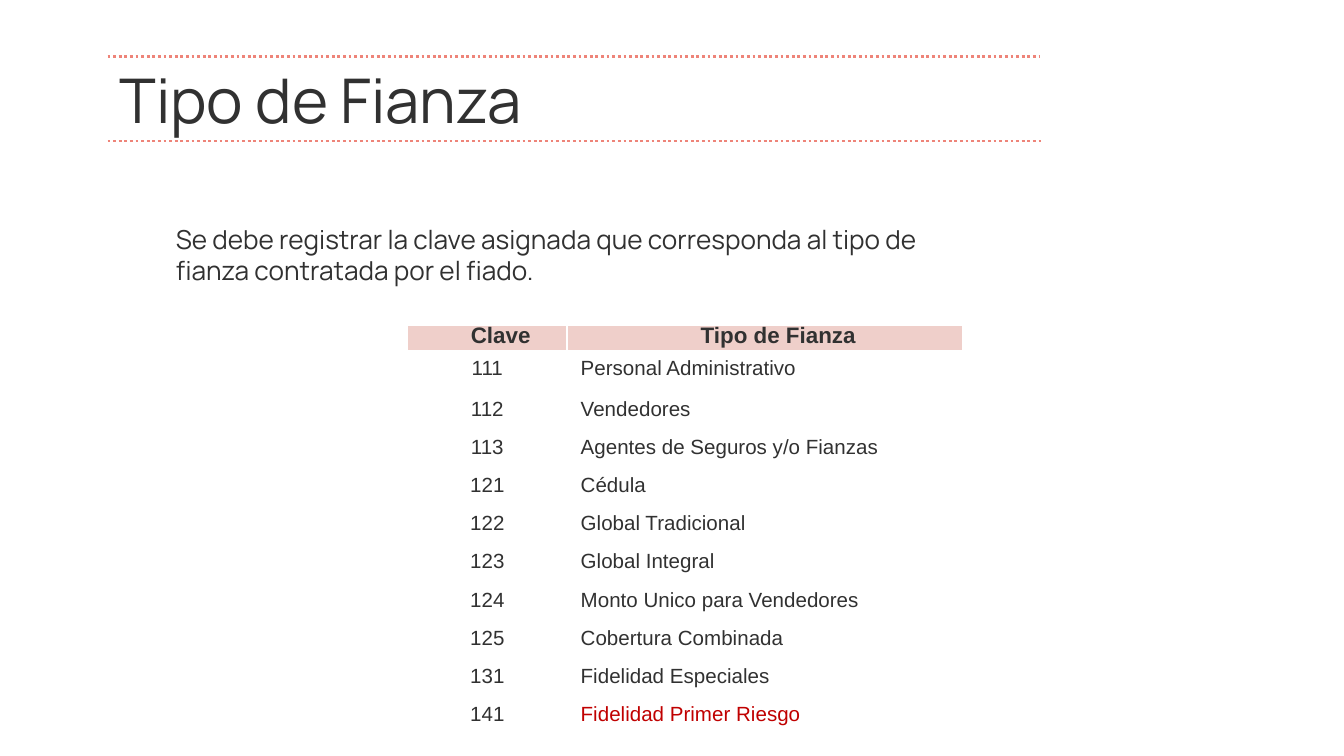
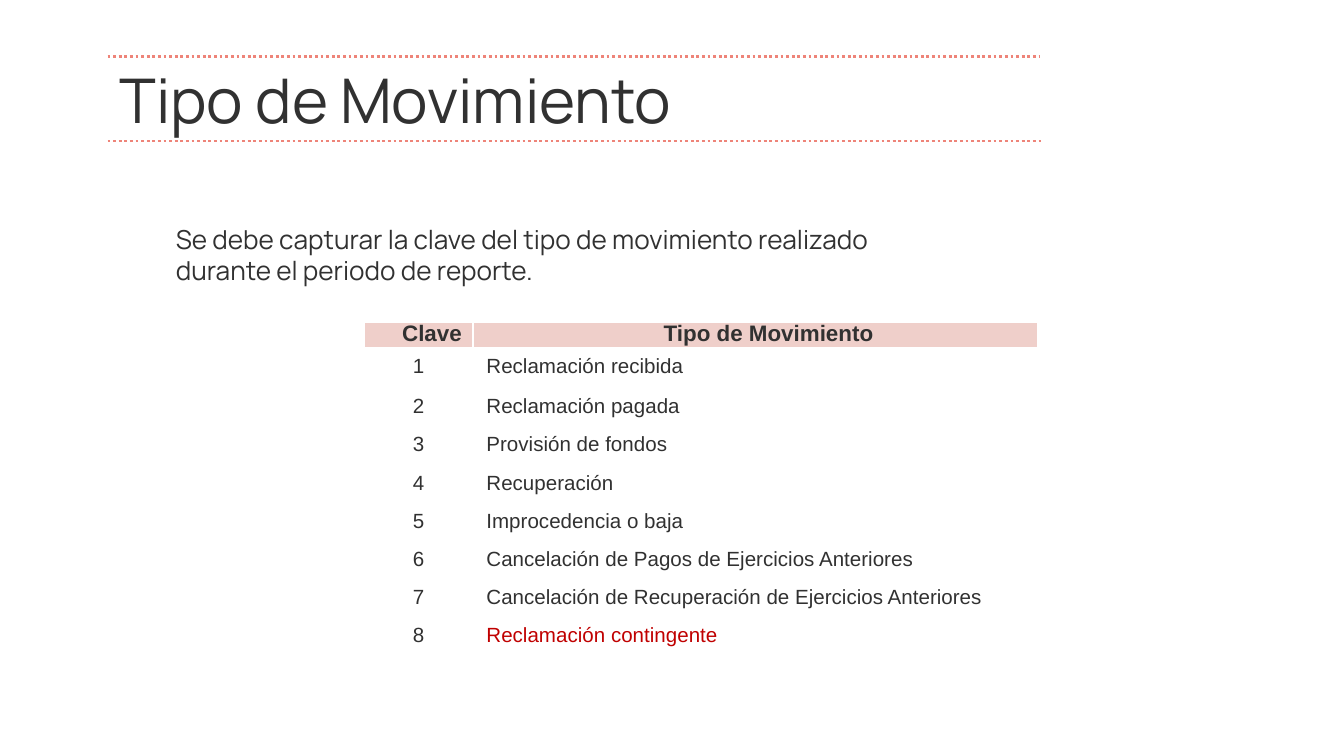
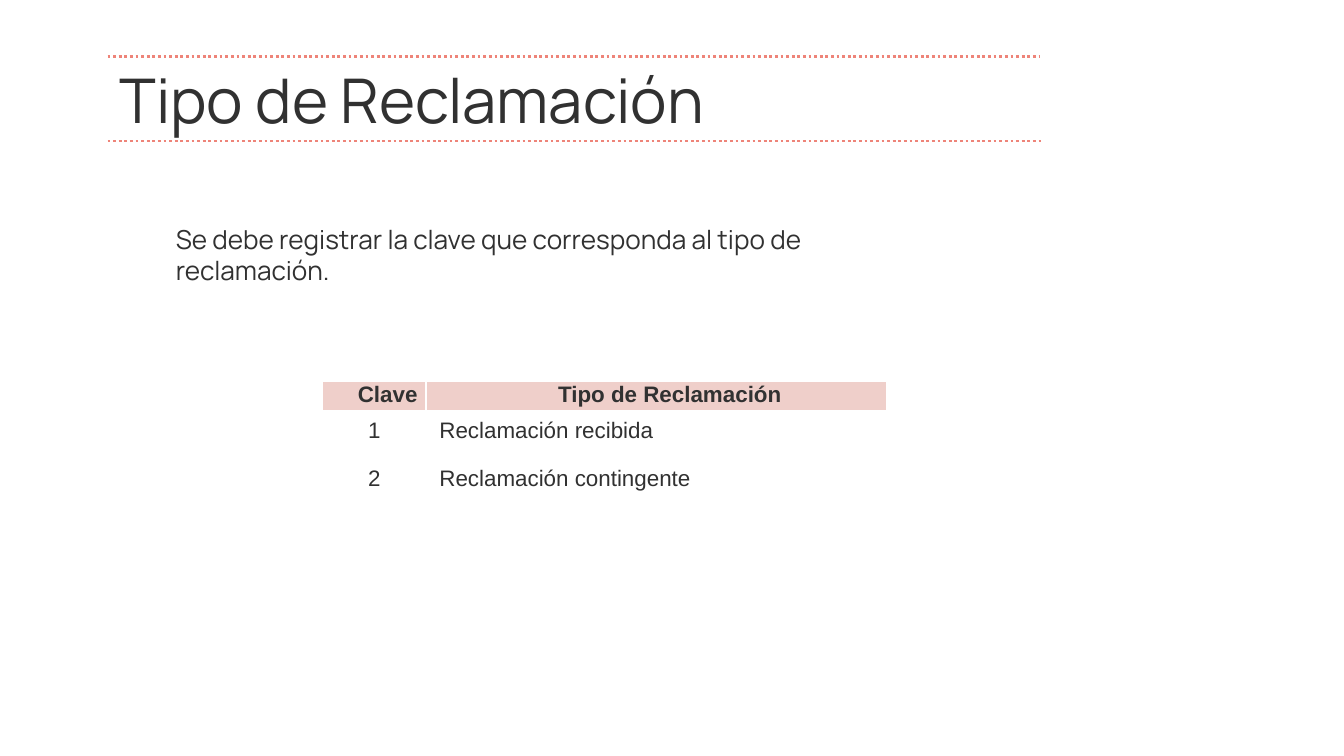
from lxml import etree
from pptx import Presentation
from pptx.dml.color import RGBColor
from pptx.enum import dml, shapes, text
from pptx.oxml.ns import qn
from pptx.util import Pt

INK = RGBColor(0x31, 0x31, 0x31)
CORAL = RGBColor(0xEE, 0x84, 0x79)
BLUSH = RGBColor(0xEF, 0xCF, 0xCA)
RED = RGBColor(0xC0, 0x00, 0x00)
WHITE = RGBColor(0xFF, 0xFF, 0xFF)

CATALOGUES = [
    {
        "title": "Tipo de Fianza",
        "intro": "Se debe registrar la clave asignada que corresponda al tipo de "
                 "fianza contratada por el fiado.",
        "entries": [
            ("111", "Personal Administrativo"),
            ("112", "Vendedores"),
            ("113", "Agentes de Seguros y/o Fianzas"),
            ("121", "Cédula"),
            ("122", "Global Tradicional"),
            ("123", "Global Integral"),
            ("124", "Monto Unico para Vendedores"),
            ("125", "Cobertura Combinada"),
            ("131", "Fidelidad Especiales"),
            ("141", "Fidelidad Primer Riesgo"),
        ],
        "highlight": "141",
        "corner": (218.2, 174.2),
        "columns": (85.7, 211.7),
        "rows": (13.7, 21.6, 19.6),
        "size": 11,
    },
    {
        "title": "Tipo de Movimiento",
        "intro": "Se debe capturar la clave del tipo de movimiento realizado "
                 "durante el periodo de reporte.",
        "entries": [
            ("1", "Reclamación recibida"),
            ("2", "Reclamación pagada"),
            ("3", "Provisión de fondos"),
            ("4", "Recuperación"),
            ("5", "Improcedencia o baja"),
            ("6", "Cancelación de Pagos de Ejercicios Anteriores"),
            ("7", "Cancelación de Recuperación de Ejercicios Anteriores"),
            ("8", "Reclamación contingente"),
        ],
        "highlight": "8",
        "corner": (195.1, 172.8),
        "columns": (58.3, 302.4),
        "rows": (13.7, 21.6, 19.6),
        "size": 11,
    },
    {
        "title": "Tipo de Reclamación",
        "intro": "Se debe registrar la clave que corresponda al tipo de reclamación.",
        "entries": [
            ("1", "Reclamación recibida"),
            ("2", "Reclamación contingente"),
        ],
        "highlight": None,
        "corner": (172.8, 204.5),
        "columns": (55.4, 247),
        "rows": (15.8, 25.9, 23.8),
        "size": 12,
    },
]

TITLE_BOX = (56.9, 30.2, 499.7, 45.4)
INTRO_BOX = (87.1, 110.2, 424.8, 52.6)
TITLE_RULES = [(75.6, 558.7), (30.2, 556.6)]  # height on the slide, right end
RULE_LEFT = 57.6


def style(paragraph, size, font="Arial", colour=INK, bold=False):
    for run in paragraph.runs:
        run.font.name = font
        run.font.size = Pt(size)
        run.font.bold = bold
        run.font.color.rgb = colour


def add_text(slide, box, wording, size):
    frame = slide.shapes.add_textbox(*map(Pt, box)).text_frame
    frame.word_wrap = True
    frame.vertical_anchor = text.MSO_ANCHOR.MIDDLE
    frame.margin_left = frame.margin_right = Pt(7.2)
    frame.margin_top = frame.margin_bottom = Pt(7.2)
    frame.text = wording
    style(frame.paragraphs[0], size, "Manrope")


def add_title_rule(slide, top, right):
    rule = slide.shapes.add_connector(
        shapes.MSO_CONNECTOR.STRAIGHT, Pt(RULE_LEFT), Pt(top), Pt(right), Pt(top))
    rule.line.color.rgb = CORAL
    rule.line.width = Pt(1.5)
    rule.line.dash_style = dml.MSO_LINE.ROUND_DOT
    etree.SubElement(rule._element.spPr, qn("a:effectLst"))


def add_borders(cell):
    properties = cell._tc.get_or_add_tcPr()
    for position, side in enumerate(("a:lnL", "a:lnR", "a:lnT", "a:lnB")):
        border = etree.Element(qn(side), w=str(Pt(1)))
        fill = etree.SubElement(border, qn("a:solidFill"))
        etree.SubElement(fill, qn("a:srgbClr"), val=str(WHITE))
        properties.insert(position, border)


def format_heading(cell):
    cell.fill.solid()
    cell.fill.fore_color.rgb = BLUSH
    cell.vertical_anchor = text.MSO_ANCHOR.MIDDLE
    cell.margin_left = cell.margin_right = Pt(2.2)
    cell.margin_top = cell.margin_bottom = 0
    heading = cell.text_frame.paragraphs[0]
    heading.alignment = text.PP_ALIGN.CENTER
    heading.line_spacing = Pt(11.5)
    heading.space_after = Pt(5)
    heading._p.get_or_add_pPr().set("indent", str(Pt(14.4)))
    style(heading, 12, bold=True)


def format_entry(cell, alignment, size, colour):
    cell.fill.background()
    entry = cell.text_frame.paragraphs[0]
    entry.alignment = alignment
    style(entry, size, colour=colour)


def add_key_table(slide, catalogue):
    lines = [("Clave", catalogue["title"])] + catalogue["entries"]
    header, first, rest = catalogue["rows"]
    heights = [header, first] + [rest] * (len(lines) - 2)
    widths = catalogue["columns"]
    table = slide.shapes.add_table(
        len(lines), len(widths), *map(Pt, catalogue["corner"]),
        Pt(sum(widths)), Pt(sum(heights))).table
    table.first_row = table.horz_banding = False
    for column, width in zip(table.columns, widths):
        column.width = Pt(width)
    alignments = (text.PP_ALIGN.CENTER, text.PP_ALIGN.JUSTIFY)

    for r, (line, height) in enumerate(zip(lines, heights)):
        table.rows[r].height = Pt(height)
        for c, wording in enumerate(line):
            cell = table.cell(r, c)
            cell.text_frame.text = wording
            if r == 0:
                format_heading(cell)
            else:
                highlighted = c == 1 and line[0] == catalogue["highlight"]
                format_entry(cell, alignments[c], catalogue["size"],
                             RED if highlighted else INK)
            add_borders(cell)


def main():
    deck = Presentation()
    deck.slide_width, deck.slide_height = Pt(720), Pt(405)
    for catalogue in CATALOGUES:
        slide = deck.slides.add_slide(deck.slide_layouts[6])
        add_text(slide, TITLE_BOX, catalogue["title"], 33)
        for top, right in TITLE_RULES:
            add_title_rule(slide, top, right)
        add_text(slide, INTRO_BOX, catalogue["intro"], 14)
        add_key_table(slide, catalogue)
    deck.save("out.pptx")


if __name__ == "__main__":
    main()
